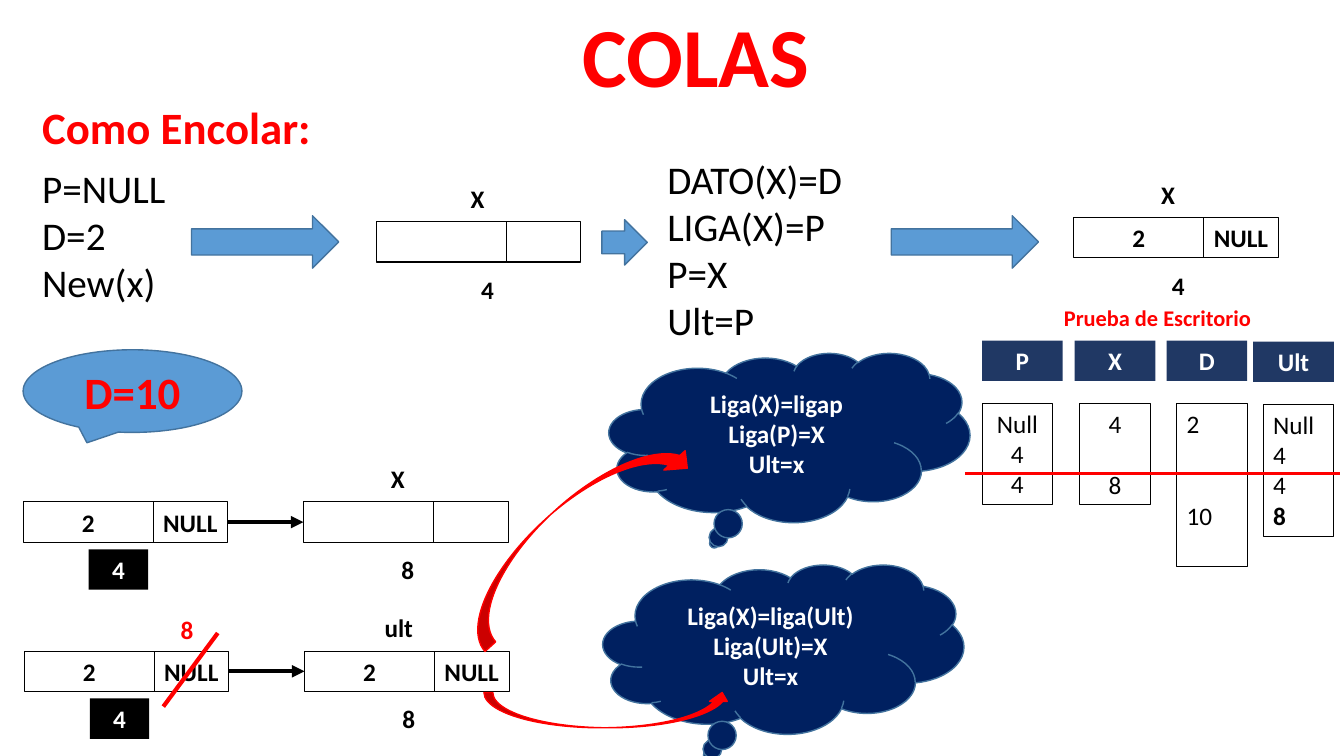
from lxml import etree
from pptx import Presentation
from pptx.dml.color import RGBColor
from pptx.enum.shapes import MSO_CONNECTOR, MSO_SHAPE
from pptx.enum.text import MSO_ANCHOR, PP_ALIGN
from pptx.oxml.ns import qn
from pptx.util import Inches, Pt

RECT = MSO_SHAPE.RECTANGLE
CLOUD = MSO_SHAPE.CLOUD_CALLOUT
BALLOON = MSO_SHAPE.OVAL_CALLOUT
RIGHT_ARROW = MSO_SHAPE.RIGHT_ARROW
CURVED_DOWN = MSO_SHAPE.CURVED_DOWN_ARROW
CURVED_UP = MSO_SHAPE.CURVED_UP_ARROW
STRAIGHT = MSO_CONNECTOR.STRAIGHT
LEFT, CENTER = PP_ALIGN.LEFT, PP_ALIGN.CENTER
TOP, MIDDLE = MSO_ANCHOR.TOP, MSO_ANCHOR.MIDDLE

BLACK, WHITE, RED = "000000", "FFFFFF", "FF0000"
BLUE, EDGE, CLOUD_NAVY, HEAD_NAVY = "5B9BD5", "43739E", "002060", "203864"
FONT = "Calibri"
LINE_STEP = 22  # height in points of one 18 pt text line

# The page is a grid of square cells, a tenth of an inch each
CELL = Inches(0.1)
DATA_W, LINK_W, NODE_H = 12.9, 7.4, 4
LABEL_W = 5.9

deck = Presentation()
deck.slide_width = Inches(13.33)
deck.slide_height = Inches(7.5)
page = deck.slides.add_slide(deck.slide_layouts[6])


def add_box(kind, at, lines=(), size=18, color=BLACK, bold=True, align=CENTER,
            fill=None, edge=None, edge_width=0.75, anchor=TOP, wrap=True, gaps=()):
    """Add a text box (kind None) or a preset shape; at is in grid cells."""
    place = [round(value * CELL) for value in at]
    if kind is None:
        box = page.shapes.add_textbox(*place)
    else:
        box = page.shapes.add_shape(kind, *place)
        box.shadow.inherit = False
        if fill:
            box.fill.solid()
            box.fill.fore_color.rgb = RGBColor.from_string(fill)
        else:
            box.fill.background()
        if edge:
            box.line.color.rgb = RGBColor.from_string(edge)
            box.line.width = Pt(edge_width)
        else:
            box.line.fill.background()
    frame = box.text_frame
    frame.word_wrap = wrap
    frame.vertical_anchor = anchor
    for index, text in enumerate(lines):
        para = frame.paragraphs[0] if index == 0 else frame.add_paragraph()
        para.text = text
        para.alignment = align
        para.font.name = FONT
        para.font.size = Pt(size)
        para.font.bold = bold
        para.font.color.rgb = RGBColor.from_string(color)
        if index and gaps:
            para.space_before = Pt(gaps[index] * LINE_STEP)
    return box


def add_line(start, end, color, width):
    """Add a straight line without shadow; the ends are in grid cells."""
    ends = [round(value * CELL) for value in (*start, *end)]
    line = page.shapes.add_connector(STRAIGHT, *ends)
    line.line.color.rgb = RGBColor.from_string(color)
    line.line.width = Pt(width)
    etree.SubElement(line._element.spPr, qn("a:effectLst"))
    return line


# Headings
add_box(None, (54.5, -0.1, 29.1, 11.1), ["COLAS"], 60, RED)
add_box(None, (3.2, 9.4, 31.1, 6.4), ["Como Encolar:"], 32, RED, align=LEFT)
add_box(None, (103, 29.7, 23.6, 3.7), ["Prueba de Escritorio"], 16, RED)

# Code steps
add_box(None, (3.2, 15.8, 26.2, 15.1), ["P=NULL", "D=2", "New(x)"],
        28, bold=False, align=LEFT)
add_box(None, (65.2, 14.9, 26.2, 19.9), ["DATO(X)=D", "LIGA(X)=P", "P=X", "Ult=P"],
        28, bold=False, align=LEFT)

# Block arrows between the steps
for at in [(19, 21.4, 14.6, 5.2), (59.7, 21.8, 4.5, 4.5), (88.4, 21.4, 14.6, 5.2)]:
    add_box(RIGHT_ARROW, at, fill=BLUE, edge=EDGE, edge_width=1)

# New value and the two thoughts
add_box(BALLOON, (2.3, 34.7, 21.7, 8.2), ["D=10"], 32, RED,
        fill=BLUE, edge=EDGE, edge_width=1, anchor=MIDDLE)
thoughts = [
    (60.4, 35, ["Liga(X)=ligap", "Liga(P)=X", "Ult=x"]),
    (59.8, 56, ["Liga(X)=liga(Ult)", "Liga(Ult)=X", "Ult=x"]),
]
for left, top, lines in thoughts:
    add_box(CLOUD, (left, top, 35.8, 16.8), lines, color=WHITE,
            fill=CLOUD_NAVY, edge=EDGE, edge_width=1, anchor=MIDDLE)

# List nodes: left, top, data, link, name above, address below, name offset
nodes = [
    (37.3, 22, "", "", "X", "4", 7.1),
    (106.5, 21.6, "2", "NULL", "X", "4", 6.4),
    (2.3, 49.8, "2", "NULL", "", "4", 5.5),
    (30.1, 49.8, "", "", "X", "8", 6.4),
    (2.4, 64.6, "2", "NULL", "", "4", 5.5),
    (30.2, 64.6, "2", "NULL", "ult", "8", 6.4),
]
cells = []
for left, top, data, link, name, address, offset in nodes:
    data_cell = add_box(RECT, (left, top, DATA_W, NODE_H),
                        [data] if data else [], edge=BLACK)
    link_cell = add_box(RECT, (left + DATA_W, top, LINK_W, NODE_H),
                        [link] if link else [], edge=BLACK, align=LEFT, wrap=False)
    cells.append((data_cell, link_cell))
    address_at = (left + offset + 1, top + 4.7, LABEL_W, NODE_H)
    if name:
        add_box(None, (left + offset, top - 4.3, LABEL_W, NODE_H), [name])
        add_box(None, address_at, [address])
    else:
        add_box(RECT, address_at, [address], color=WHITE, fill=BLACK)

# Links from each first node to the next one
for first, second in [(2, 3), (4, 5)]:
    link = add_line((0, 0), (1, 1), BLACK, 3)
    link.begin_connect(cells[first][1], 3)
    link.end_connect(cells[second][0], 1)
    etree.SubElement(link.line._get_or_add_ln(), qn("a:tailEnd"), type="triangle")

# The old link is struck out and replaced by the new address
add_line((21.6, 62.8), (16.2, 70.1), RED, 3)
add_box(None, (15.6, 60.5, LABEL_W, NODE_H), ["8"], color=RED)

# Curved arrows to the thoughts
curve = add_box(CURVED_DOWN, (42.5, 50.1, 28.5, 5.7), fill=RED, edge=RED, edge_width=1)
curve.rotation = 317.8
add_box(CURVED_UP, (48, 68.7, 24.5, 3.5), fill=RED, edge=RED, edge_width=1)

# Desk check: head left, head top, name, body left, height, values, skipped lines
columns = [
    (97.4, 33.8, "P", 97.4, 10.1, ["Null", "4", "4"], (0, 0, 0), CENTER),
    (106.6, 33.8, "X", 107.1, 10.1, ["4", "8"], (0, 1), CENTER),
    (115.7, 33.8, "D", 116.7, 16.2, ["2", "10"], (0, 2), LEFT),
    (124.3, 33.9, "Ult", 125.3, 13.1, ["Null", "4", "4", "8"], (0, 0, 0, 0), LEFT),
]
for head_left, top, name, body_left, height, values, gaps, align in columns:
    add_box(RECT, (head_left, top, 8, NODE_H), [name], color=WHITE, fill=HEAD_NAVY)
    body = add_box(RECT, (body_left, top + 6.2, 7, height), values, bold=False,
                   align=align, edge=BLACK, gaps=gaps)
body.text_frame.paragraphs[-1].font.bold = True
add_line((95.7, 47), (132.9, 47), RED, 2.25)

deck.save("out.pptx")
